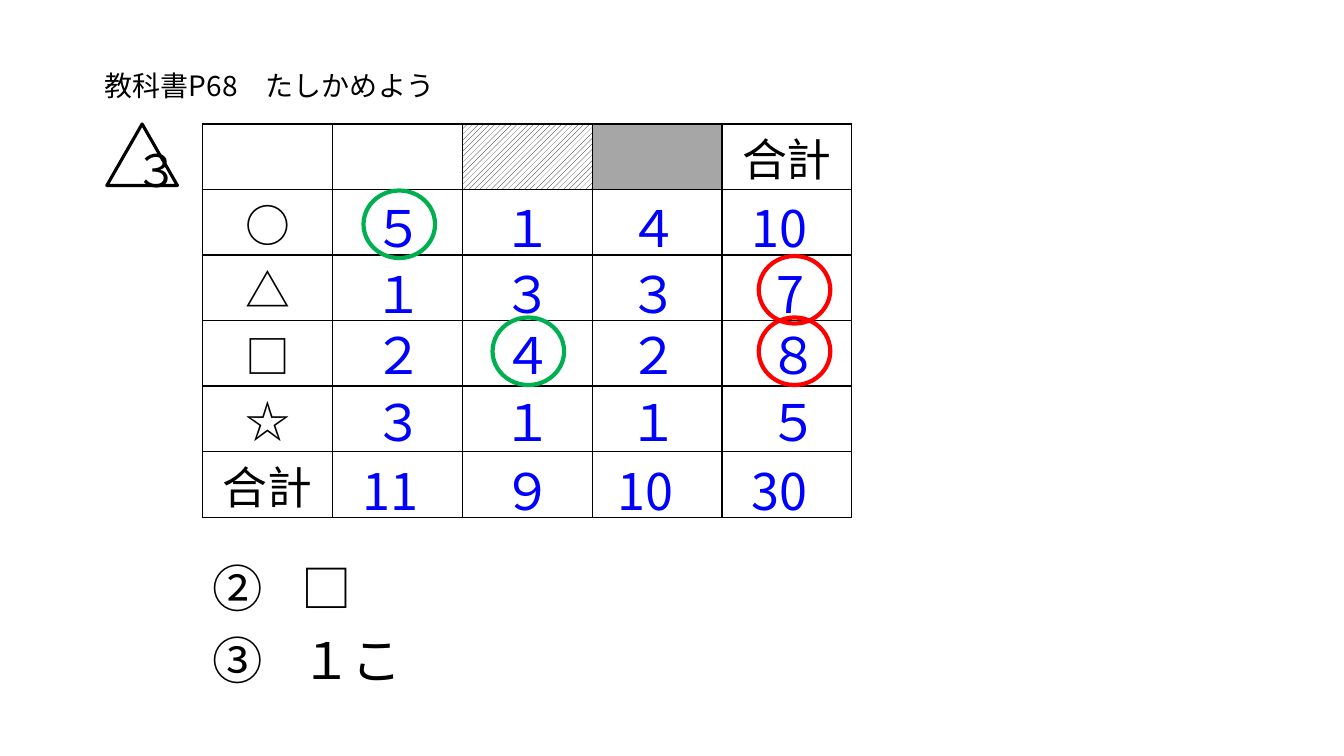
from lxml import etree
from pptx import Presentation
from pptx.dml.color import RGBColor
from pptx.enum.dml import MSO_PATTERN
from pptx.enum.shapes import MSO_SHAPE
from pptx.enum.text import MSO_ANCHOR, MSO_AUTO_SIZE, PP_ALIGN
from pptx.oxml.ns import qn
from pptx.util import Inches, Pt

FONT = "Noto Sans CJK JP"
BLACK, WHITE, GRAY = "000000", "FFFFFF", "A6A6A6"
BLUE, RED, GREEN = "0000FF", "FF0000", "00B050"
TRIANGLE, ELLIPSE = MSO_SHAPE.ISOSCELES_TRIANGLE, MSO_SHAPE.OVAL
HATCH = MSO_PATTERN.WIDE_UPWARD_DIAGONAL
CENTER = PP_ALIGN.CENTER
MIDDLE, BOTTOM = MSO_ANCHOR.MIDDLE, MSO_ANCHOR.BOTTOM
FIT_SHAPE = MSO_AUTO_SIZE.SHAPE_TO_FIT_TEXT

# Counting table: shapes down the side, shades across the top
TABLE_BOX = (2.01, 1.23, 6.44, 3.9)
SIDE_LABELS = ["", "○", "△", "□", "☆", "合計"]
COLUMN_COUNT = 5
COUNTS = [
    ["５", "１", "４", "10"],
    ["１", "３", "３", "7"],
    ["２", "４", "２", "８"],
    ["３", "１", "１", "５"],
    ["11", "９", "10", "30"],
]
# Handwritten numbers: middle of each column and top of each row
COUNT_MIDDLES = [3.96, 5.24, 6.49, 7.88]
COUNT_TOPS = [1.91, 2.56, 3.17, 3.83, 4.52]
FULL_WIDTH, HALF_WIDTH, PAIR_WIDTH = 0.71, 0.56, 0.92
RINGS = [(1, 3, RED), (2, 3, RED), (0, 0, GREEN), (2, 1, GREEN)]


def rgb(color):
    return RGBColor.from_string(color)


def inches(box):
    return [Inches(length) for length in box]


def style(paragraph, size, color):
    font = paragraph.font
    font.name, font.size = FONT, Pt(size)
    font.color.rgb = rgb(color)
    east_asian = etree.SubElement(font._element, qn("a:ea"))
    east_asian.set("typeface", FONT)


def add_label(slide, box, text, size=36, color=BLACK):
    label = slide.shapes.add_textbox(*inches(box)).text_frame
    label.word_wrap = False
    label.auto_size = FIT_SHAPE
    label.text = text
    style(label.paragraphs[0], size, color)


def add_outline(slide, preset, box, color, width):
    outline = slide.shapes.add_shape(preset, *inches(box))
    outline.shadow.inherit = False
    outline.fill.background()
    outline.line.color.rgb = rgb(color)
    outline.line.width = Pt(width)
    return outline


def add_borders(cell):
    properties = cell._tc.get_or_add_tcPr()
    for place, side in enumerate(("lnL", "lnR", "lnT", "lnB")):
        border = etree.Element(qn(f"a:{side}"), w=str(Pt(1)))
        fill = etree.SubElement(border, qn("a:solidFill"))
        etree.SubElement(fill, qn("a:srgbClr"), val=BLACK)
        properties.insert(place, border)


def add_heading(slide, left, top):
    add_label(slide, (left, top, 3.6, 0.44), "教科書P68　たしかめよう", 20)
    number = add_outline(slide, TRIANGLE, (left + 0.12, top + 0.6, 0.7, 0.61), BLACK, 2.25)
    number.fill.solid()
    number.fill.fore_color.rgb = rgb(WHITE)
    frame = number.text_frame
    frame.text = "３"
    frame.vertical_anchor = MIDDLE
    frame.paragraphs[0].alignment = CENTER
    style(frame.paragraphs[0], 32, BLACK)


def add_count_table(slide, box):
    frame = slide.shapes.add_table(len(SIDE_LABELS), COLUMN_COUNT, *inches(box))
    table = frame.table
    table.first_row = table.horz_banding = False
    labels = {(row, 0): text for row, text in enumerate(SIDE_LABELS)}
    labels[0, COLUMN_COUNT - 1] = "合計"
    for row in range(len(SIDE_LABELS)):
        for column in range(COLUMN_COUNT):
            cell = table.cell(row, column)
            cell.margin_top = cell.margin_bottom = 0
            cell.vertical_anchor = BOTTOM
            cell.fill.background()
            add_borders(cell)
            text = labels.get((row, column))
            if text:
                cell.text = text
                paragraph = cell.text_frame.paragraphs[0]
                paragraph.alignment = CENTER
                style(paragraph, 32, BLACK)

    # Shaded column heads
    hatched = table.cell(0, 2).fill
    hatched.patterned()
    hatched.pattern = HATCH
    hatched.fore_color.rgb, hatched.back_color.rgb = rgb(BLACK), rgb(WHITE)
    gray = table.cell(0, 3).fill
    gray.solid()
    gray.fore_color.rgb = rgb(GRAY)


def add_counts(slide):
    for top, counts in zip(COUNT_TOPS, COUNTS):
        for column, (middle, count) in enumerate(zip(COUNT_MIDDLES, counts)):
            width = FULL_WIDTH
            if len(count) == 2:
                width = PAIR_WIDTH
                if column == len(COUNT_MIDDLES) - 1:
                    middle -= 0.06
            elif count.isascii():
                width = HALF_WIDTH
            add_label(slide, (middle - width / 2, top, width, 0.71), count, color=BLUE)


def add_rings(slide):
    for row, column, color in RINGS:
        left = COUNT_MIDDLES[column] - FULL_WIDTH / 2
        box = (left, COUNT_TOPS[row] - 0.02, FULL_WIDTH, 0.67)
        add_outline(slide, ELLIPSE, box, color, 3)


def add_answers(slide, left, top):
    for row, (number, answer, width) in enumerate([("②", "□", 0.71), ("③", "１こ", 1.21)]):
        row_top = top + row * 0.71
        add_label(slide, (left, row_top, 0.71, 0.71), number)
        add_label(slide, (left + 0.88, row_top, width, 0.71), answer)


def main():
    presentation = Presentation()
    presentation.slide_width, presentation.slide_height = Inches(13.33), Inches(7.5)
    slide = presentation.slides.add_slide(presentation.slide_layouts[6])
    add_heading(slide, 0.94, 0.63)
    add_count_table(slide, TABLE_BOX)
    add_counts(slide)
    add_answers(slide, 2.01, 5.48)
    add_rings(slide)
    presentation.save("out.pptx")


if __name__ == "__main__":
    main()
